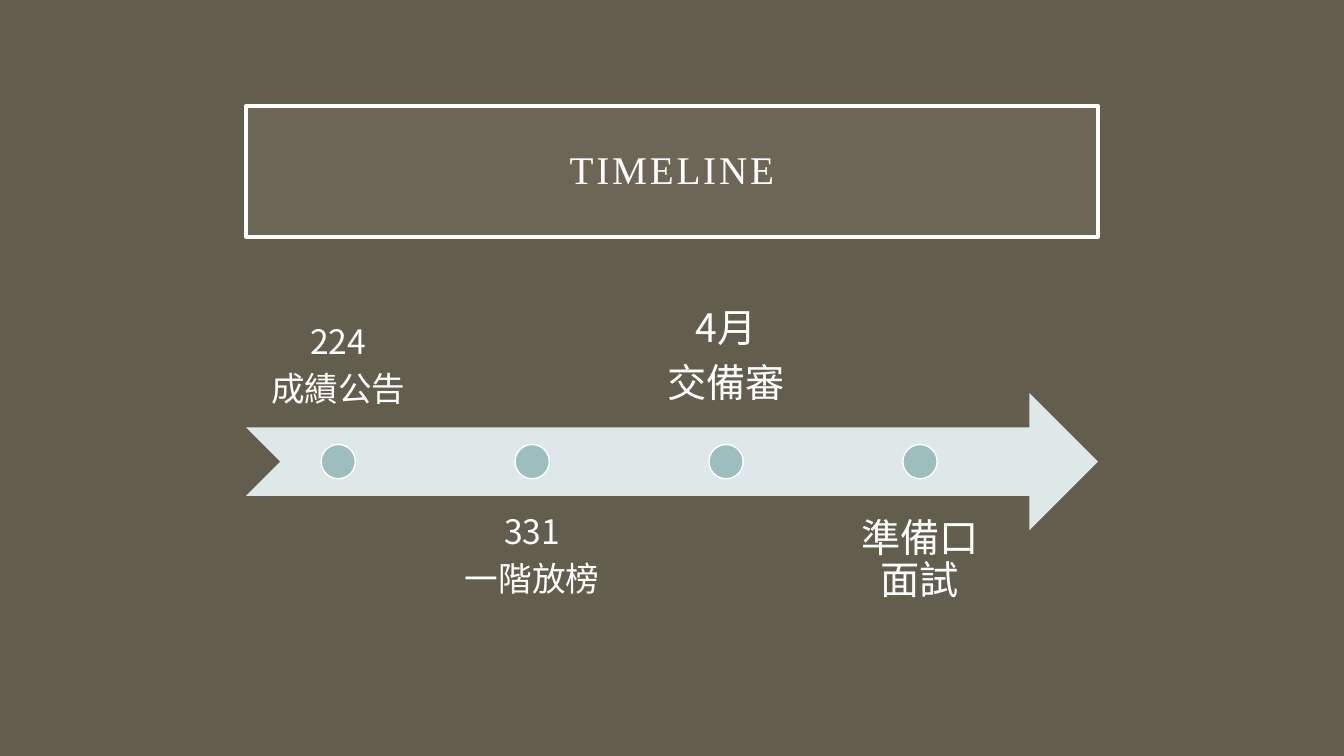
import pptx
import pptx.dml.color
import pptx.enum.shapes
import pptx.enum.text
import pptx.oxml
import pptx.oxml.ns
import pptx.util
from pptx.util import Inches

SHAPES = pptx.enum.shapes.MSO_SHAPE
ANCHOR = pptx.enum.text.MSO_ANCHOR
BACKGROUND, WHITE, TITLE_FILL = "635D4D", "FFFFFF", "A7A08E"
ARROW_FILL, DOT_FILL = "DEE8E8", "9CBEBD"
TITLE_FONT, LABEL_FONT = "Times New Roman", "Noto Sans CJK JP"


def set_color(color_format, value):
    color_format.rgb = pptx.dml.color.RGBColor.from_string(value)


class TimelineSlide:
    def __init__(self, presentation):
        self.slide = presentation.slides.add_slide(presentation.slide_layouts[5])
        self.fill(self.slide.background, BACKGROUND)

    def fill(self, target, color):
        target.fill.solid()
        set_color(target.fill.fore_color, color)

    def outline(self, shape, width):
        set_color(shape.line.color, WHITE)
        shape.line.width = pptx.util.Pt(width)

    def frame(self, shape, anchor, inset):
        frame = shape.text_frame
        frame.word_wrap = True
        frame.auto_size = pptx.enum.text.MSO_AUTO_SIZE.NONE
        frame.vertical_anchor = anchor
        frame.margin_left = frame.margin_right = Inches(inset)
        frame.margin_top = frame.margin_bottom = Inches(inset)
        return frame

    def add_text(self, paragraph, text, size, font):
        paragraph.alignment = pptx.enum.text.PP_ALIGN.CENTER
        paragraph.line_spacing = 0.9
        run = paragraph.add_run()
        run.text = text
        run.font.size = pptx.util.Pt(size)
        run.font.name = font
        set_color(run.font.color, WHITE)
        properties = run._r.get_or_add_rPr()
        east_asian = pptx.oxml.parse_xml(
            f'<a:ea {pptx.oxml.ns.nsdecls("a")} typeface="{font}"/>')
        properties.find(pptx.oxml.ns.qn("a:latin")).addnext(east_asian)
        return run

    def title(self, text, left, top, width, height):
        title = self.slide.shapes.title
        title.left, title.top = Inches(left), Inches(top)
        title.width, title.height = Inches(width), Inches(height)
        self.fill(title, TITLE_FILL)
        self.outline(title, 2.5)
        # Translucent fill and letter spacing
        color = title._element.spPr.find(
            pptx.oxml.ns.qn("a:solidFill")).find(pptx.oxml.ns.qn("a:srgbClr"))
        color.append(pptx.oxml.parse_xml(
            f'<a:alpha {pptx.oxml.ns.nsdecls("a")} val="15000"/>'))
        frame = self.frame(title, ANCHOR.MIDDLE, 0.2)
        run = self.add_text(frame.paragraphs[0], text, 28, TITLE_FONT)
        run._r.get_or_add_rPr().set("spc", "200")

    def shape(self, kind, color, left, top, width, height):
        shape = self.slide.shapes.add_shape(
            kind, Inches(left), Inches(top), Inches(width), Inches(height))
        shape.shadow.inherit = False
        self.fill(shape, color)
        shape.line.fill.background()
        return shape

    def label(self, lines, size, left, top, width, height, anchor):
        box = self.slide.shapes.add_textbox(
            Inches(left), Inches(top), Inches(width), Inches(height))
        frame = self.frame(box, anchor, size / 126)
        for index, line in enumerate(lines):
            paragraph = frame.add_paragraph() if index else frame.paragraphs[0]
            paragraph.space_after = pptx.util.Pt(0.32 * size)
            self.add_text(paragraph, line, size, LABEL_FONT)


def main():
    presentation = pptx.Presentation()
    presentation.slide_width = Inches(13.33)
    presentation.slide_height = Inches(7.5)
    timeline = TimelineSlide(presentation)

    # Title and arrow share the same left edge and width
    left, width = 2.44, 8.45
    timeline.title("TIMELINE", left, 1.05, width, 1.3)
    arrow_top, arrow_height = 3.9, 1.36
    timeline.shape(SHAPES.NOTCHED_RIGHT_ARROW, ARROW_FILL,
                   left, arrow_top, width, arrow_height)

    # Milestones alternate above and below the arrow
    milestones = [
        (["224", "成績公告"], 24),
        (["331", "一階放榜"], 24),
        (["4月", "交備審"], 28),
        (["準備口面試"], 28),
    ]
    label_width, step = 1.83, 5.77 / 3
    dot = arrow_height / 4
    for index, (lines, size) in enumerate(milestones):
        label_left = left + index * step
        top, anchor = (4.92, ANCHOR.TOP) if index % 2 else (2.89, ANCHOR.BOTTOM)
        timeline.label(lines, size, label_left, top, label_width, arrow_height, anchor)
        marker = timeline.shape(
            SHAPES.OVAL, DOT_FILL, label_left + (label_width - dot) / 2,
            arrow_top + (arrow_height - dot) / 2, dot, dot)
        timeline.outline(marker, 1)

    presentation.save("out.pptx")


if __name__ == "__main__":
    main()
